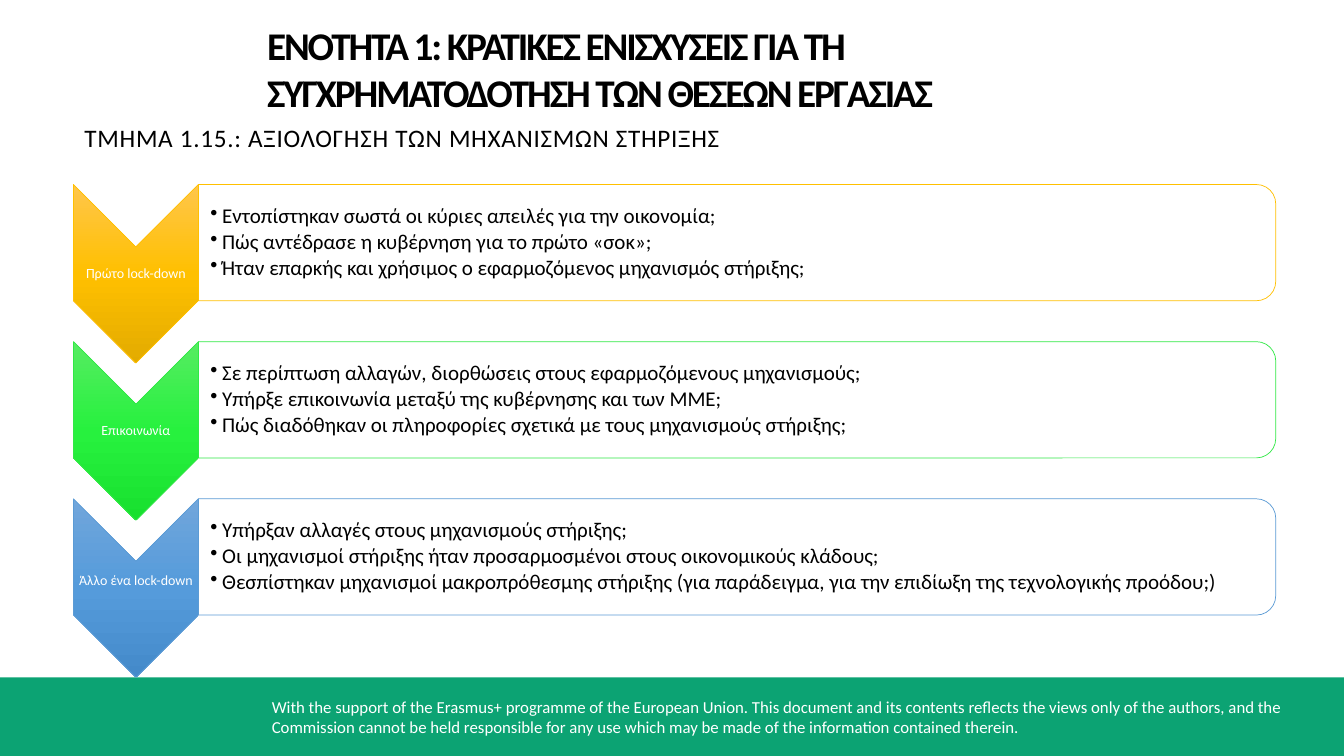
from lxml import etree
from pptx import Presentation
from pptx.dml.color import RGBColor
from pptx.enum.lang import MSO_LANGUAGE_ID
from pptx.enum.shapes import MSO_SHAPE
from pptx.enum.text import MSO_ANCHOR, MSO_AUTO_SIZE, PP_ALIGN
from pptx.oxml.ns import qn
from pptx.util import Cm, Pt

RECTANGLE = MSO_SHAPE.RECTANGLE
CHEVRON = MSO_SHAPE.CHEVRON
ROUNDED_END = MSO_SHAPE.ROUND_2_SAME_RECTANGLE
TOP, MIDDLE = MSO_ANCHOR.TOP, MSO_ANCHOR.MIDDLE
LEFT, CENTER = PP_ALIGN.LEFT, PP_ALIGN.CENTER
NO_FIT = MSO_AUTO_SIZE.NONE
GREEK = MSO_LANGUAGE_ID.GREEK

SLIDE_WIDTH, SLIDE_HEIGHT = 33.87, 19.05
FONT = "Calibri"
BLACK, WHITE, GREEN = "000000", "FFFFFF", "0CA373"
DEFAULT_INSETS = (0.25, 0.13, 0.25, 0.13)
THIN_INSETS = (0.03, 0.03, 0.03, 0.03)

TITLE = "Ενότητα 1: Κρατικές ενισχύσεις για τη συγχρηματοδότηση των θέσεων εργασίας"
SECTION = "ΤΜΗΜΑ 1.15.: ΑΞΙΟΛΟΓΗΣΗ ΤΩΝ ΜΗΧΑΝΙΣΜΩΝ ΣΤΗΡΙΞΗΣ"
DISCLAIMER = (
    "With the support of the Erasmus+ programme of the European Union. "
    "This document and its contents reflects the views only of the authors, "
    "and the Commission cannot be held responsible for any use which may be "
    "made of the information contained therein."
)
PHASES = [
    ("Πρώτο lock-down", "FFC000", ("FFC64B", "FFC000", "E3AB00"), THIN_INSETS, [
        "Εντοπίστηκαν σωστά οι κύριες απειλές για την οικονομία;",
        "Πώς αντέδρασε η κυβέρνηση για το πρώτο «σοκ»;",
        "Ήταν επαρκής και χρήσιμος ο εφαρμοζόμενος μηχανισμός στήριξης;",
    ]),
    ("Επικοινωνία", "30E845", ("56EC62", "27F13E", "18E02F"), THIN_INSETS, [
        "Σε περίπτωση αλλαγών, διορθώσεις στους εφαρμοζόμενους μηχανισμούς;",
        "Υπήρξε επικοινωνία μεταξύ της κυβέρνησης και των ΜΜΕ;",
        "Πώς διαδόθηκαν οι πληροφορίες σχετικά με τους μηχανισμούς στήριξης;",
    ]),
    ("Άλλο ένα lock-down", "5B9BD5", ("71A6DB", "559BDB", "448ACA"), (0.03, 0.03, 0.03, 0.4), [
        "Υπήρξαν αλλαγές στους μηχανισμούς στήριξης;",
        "Οι μηχανισμοί στήριξης ήταν προσαρμοσμένοι στους οικονομικούς κλάδους;",
        "Θεσπίστηκαν μηχανισμοί μακροπρόθεσμης στήριξης "
        "(για παράδειγμα, για την επιδίωξη της τεχνολογικής προόδου;)",
    ]),
]


def color(hex_string):
    """Turn a hex string into a colour."""
    return RGBColor.from_string(hex_string)


def write(frame, lines, size, ink=BLACK, bold=False, align=LEFT, anchor=TOP,
          insets=DEFAULT_INSETS, line_spacing=1.0, space_after=0, bullet=False,
          tracking=0, caps=False):
    """Fill a text frame with one paragraph per line."""
    frame.word_wrap = True
    frame.auto_size = NO_FIT
    frame.vertical_anchor = anchor
    (frame.margin_left, frame.margin_top,
     frame.margin_right, frame.margin_bottom) = map(Cm, insets)
    for number, line in enumerate(lines):
        paragraph = frame.add_paragraph() if number else frame.paragraphs[0]
        paragraph.alignment = align
        paragraph.line_spacing = line_spacing
        paragraph.space_after = Pt(space_after)
        if bullet:
            paragraph.level = 1
            properties = paragraph._p.get_or_add_pPr()
            properties.set("marL", str(Cm(0.3)))
            properties.set("indent", str(-Cm(0.3)))
            etree.SubElement(properties, qn("a:buChar")).set("char", "•")
        run = paragraph.add_run()
        run.text = line
        run.font.name, run.font.size, run.font.bold = FONT, Pt(size), bold
        run.font.color.rgb = color(ink)
        if tracking:
            run._r.get_or_add_rPr().set("spc", str(int(tracking * 100)))
        if caps:
            run.font.language_id = GREEK
            run._r.get_or_add_rPr().set("cap", "all")


def add_text(slide, box, lines, size, **style):
    """Place a text box and write into it."""
    write(slide.shapes.add_textbox(*map(Cm, box)).text_frame, lines, size, **style)


def add_turned(slide, preset, box, outline):
    """Place a preset turned a quarter so that it covers the given box."""
    left, top, width, height = box
    turned = slide.shapes.add_shape(
        preset, Cm(left + (width - height) / 2), Cm(top + (height - width) / 2),
        Cm(height), Cm(width))
    turned.rotation = 90
    turned.shadow.inherit = False
    turned.line.color.rgb = color(outline)
    turned.line.width = Pt(0.5)
    return turned


def shade(shape, tones):
    """Blend three tones from the top to the bottom of the slide."""
    shape.fill.gradient()
    gradient = shape._element.spPr.find(qn("a:gradFill"))
    gradient.set("rotWithShape", "0")
    gradient.find(qn("a:lin")).set("ang", "5400000")
    stops = gradient.find(qn("a:gsLst"))
    for stop in list(stops):
        stops.remove(stop)
    for position, tone in zip((0, 50000, 100000), tones):
        stop = etree.SubElement(stops, qn("a:gs"), pos=str(position))
        etree.SubElement(stop, qn("a:srgbClr"), val=tone)


def add_footer(slide, box):
    """Draw the green band with the disclaimer."""
    left, top, width, height = box
    band = slide.shapes.add_shape(RECTANGLE, *map(Cm, box))
    band.shadow.inherit = False
    band.fill.solid()
    band.fill.fore_color.rgb = color(GREEN)
    band.line.fill.background()
    add_text(slide, (left + 6.6, top + 0.36, width - 7.4, 1.28), [DISCLAIMER], 12, ink=WHITE)


def add_heading(slide, box):
    """Format the title and put the section name below it."""
    left, top, width, height = box
    title = slide.shapes.title
    title.left, title.top = Cm(left + 4.85), Cm(top)
    title.width, title.height = Cm(width - 4.85), Cm(height)
    write(title.text_frame, [TITLE], 28, bold=True, insets=(0.03, 0.06, 0, 0),
          tracking=-1.5, caps=True)
    add_text(slide, (left, top + 2.44, 16.92, 1.83), [SECTION], 18, tracking=0.5,
             insets=(0.28, 0.17, 0.25, 0.13))


def add_phase(slide, box, phase):
    """Draw one chevron with its panel of questions."""
    left, top, width, height = box
    label, accent, tones, label_insets, questions = phase
    arrow_width, panel_height = 3.15, 2.93
    panel_left, panel_width = left + arrow_width, width - arrow_width

    shade(add_turned(slide, CHEVRON, (left, top, arrow_width, height), accent), tones)
    add_text(slide, (left, top + 1.57, arrow_width, 1.35), [label], 10, ink=WHITE,
             align=CENTER, anchor=MIDDLE, insets=label_insets,
             line_spacing=0.9, space_after=3.5)

    panel = add_turned(slide, ROUNDED_END, (panel_left, top, panel_width, panel_height), accent)
    panel.fill.solid()
    panel.fill.fore_color.rgb = color(WHITE)
    paint = panel._element.spPr.find(qn("a:solidFill"))[0]
    etree.SubElement(paint, qn("a:alpha"), val="90000")
    add_text(slide, (panel_left, top + 0.15, panel_width - 0.15, panel_height - 0.3), questions,
             15, anchor=MIDDLE, insets=(0.3, 0.03, 0.03, 0.03), line_spacing=0.9,
             space_after=2.25, bullet=True)


def main():
    """Build the slide and save it."""
    deck = Presentation()
    deck.slide_width, deck.slide_height = Cm(SLIDE_WIDTH), Cm(SLIDE_HEIGHT)
    slide = deck.slides.add_slide(deck.slide_layouts[5])
    add_footer(slide, (0, 17.07, SLIDE_WIDTH, 1.98))
    for row, phase in enumerate(PHASES):
        add_phase(slide, (1.85, 4.65 + 3.96 * row, 30.3, 4.5), phase)
    add_heading(slide, (1.85, 0.48, 27.66, 3.66))
    deck.save("out.pptx")


if __name__ == "__main__":
    main()
